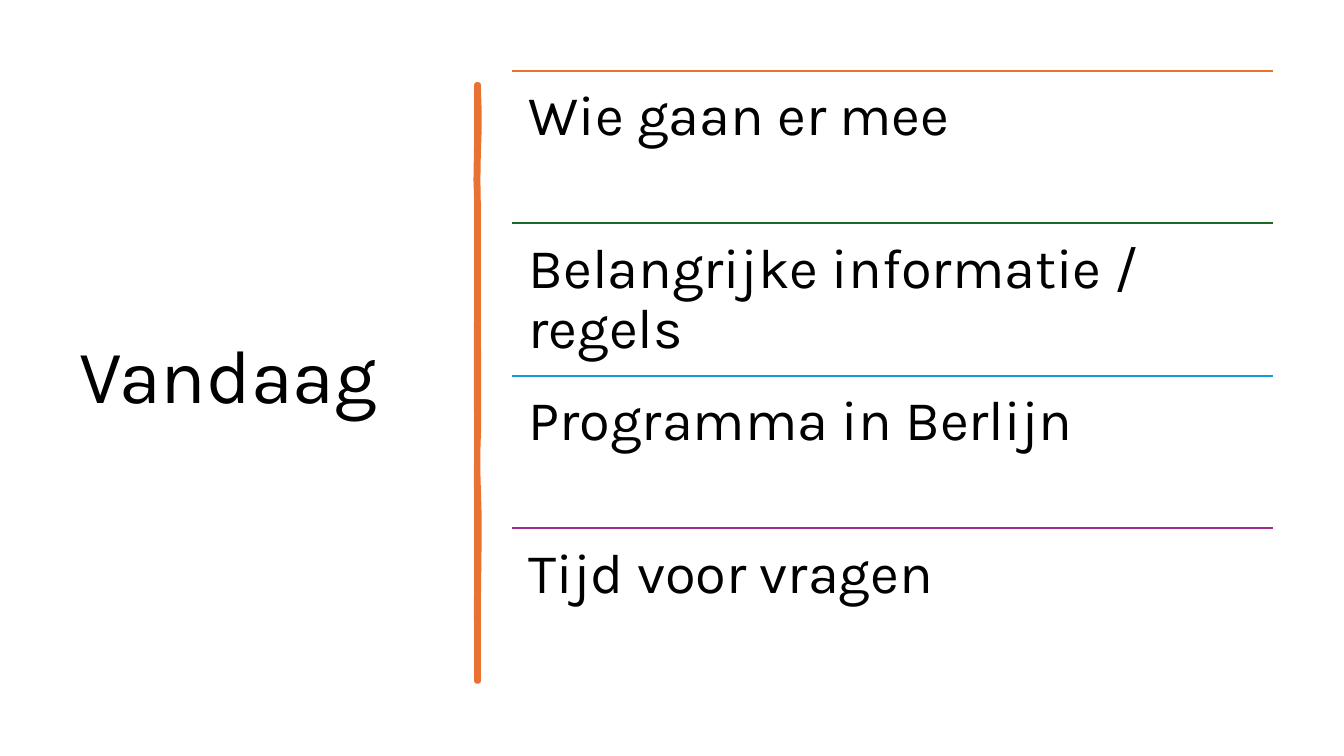
from pptx import Presentation
from pptx.dml.color import RGBColor
from pptx.enum.shapes import MSO_CONNECTOR
from pptx.enum.text import MSO_ANCHOR
from pptx.oxml.ns import qn
from pptx.util import Cm, Pt
from lxml.etree import SubElement

FONT = "Karla"
ORANGE = "E97132"
TOPICS = [
    ("Wie gaan er mee", ORANGE),
    ("Belangrijke informatie / regels", "196B24"),
    ("Programma in Berlijn", "0F9ED5"),
    ("Tijd voor vragen", "A02B93"),
]
STROKE = [
    (0, 0, 5), (60, 0, 7), (120, 0, 7), (180, -1, 5), (240, -2, 4),
    (300, 0, 5), (400, 0, 5), (530, 0, 5), (640, -1, 5), (700, -1, 6),
    (800, -1, 6), (860, 0, 6), (920, 0, 4), (980, -1, 4), (1080, 0, 7),
    (1160, 0, 7), (1240, 0, 6), (1320, -1, 5), (1400, 0, 5), (1504, 0, 5),
]


def color(code):
    return RGBColor.from_string(code)


def add_text(slide, box, words, size, inset, anchor):
    frame = slide.shapes.add_textbox(*map(Cm, box)).text_frame
    frame.word_wrap = True
    frame.vertical_anchor = anchor
    frame.margin_left = frame.margin_right = Cm(inset[0])
    frame.margin_top = frame.margin_bottom = Cm(inset[1])
    para = frame.paragraphs[0]
    para.line_spacing = 0.9
    run = para.add_run()
    run.text = words
    run.font.name = FONT
    run.font.size = Pt(size)
    run.font.color.rgb = color("000000")


def add_title(slide, box):
    add_text(slide, box, "Vandaag", 54, (0.25, 0.13), MSO_ANCHOR.MIDDLE)


def add_stroke(slide, left, top):
    right_side = [(right, y) for y, _, right in STROKE]
    left_side = [(edge, y) for y, edge, _ in reversed(STROKE)]
    points = right_side + left_side
    pen = slide.shapes.build_freeform(*points[0], scale=Cm(0.01))
    pen.add_line_segments(points[1:], close=True)
    stroke = pen.convert_to_shape(Cm(left), Cm(top))
    stroke.shadow.inherit = False
    stroke.fill.solid()
    stroke.fill.fore_color.rgb = color(ORANGE)
    stroke.line.color.rgb = color(ORANGE)
    stroke.line.width = Pt(3.25)
    SubElement(stroke.line._get_or_add_ln(), qn("a:round"))


def add_rule(slide, left, top, width, code):
    rule = slide.shapes.add_connector(
        MSO_CONNECTOR.STRAIGHT, Cm(left), Cm(top), Cm(left + width), Cm(top)
    )
    rule.line.color.rgb = color(code)
    rule.line.width = Pt(1.5)
    SubElement(rule._element.spPr, qn("a:effectLst"))


def add_topics(slide, box):
    left, top, width, height = box
    step = height / len(TOPICS)
    for row, (words, code) in enumerate(TOPICS):
        y = top + row * step
        add_rule(slide, left, y, width, code)
        add_text(slide, (left, y, width, step), words, 40,
                 (0.42, 0.42), MSO_ANCHOR.TOP)


def main():
    deck = Presentation()
    deck.slide_width, deck.slide_height = Cm(33.87), Cm(19.05)
    slide = deck.slides.add_slide(deck.slide_layouts[6])
    add_title(slide, (1.75, 1.78, 9.5, 15.52))
    add_stroke(slide, 12.01, 2.13)
    add_topics(slide, (12.9, 1.78, 19.18, 15.38))
    deck.save("out.pptx")


if __name__ == "__main__":
    main()
